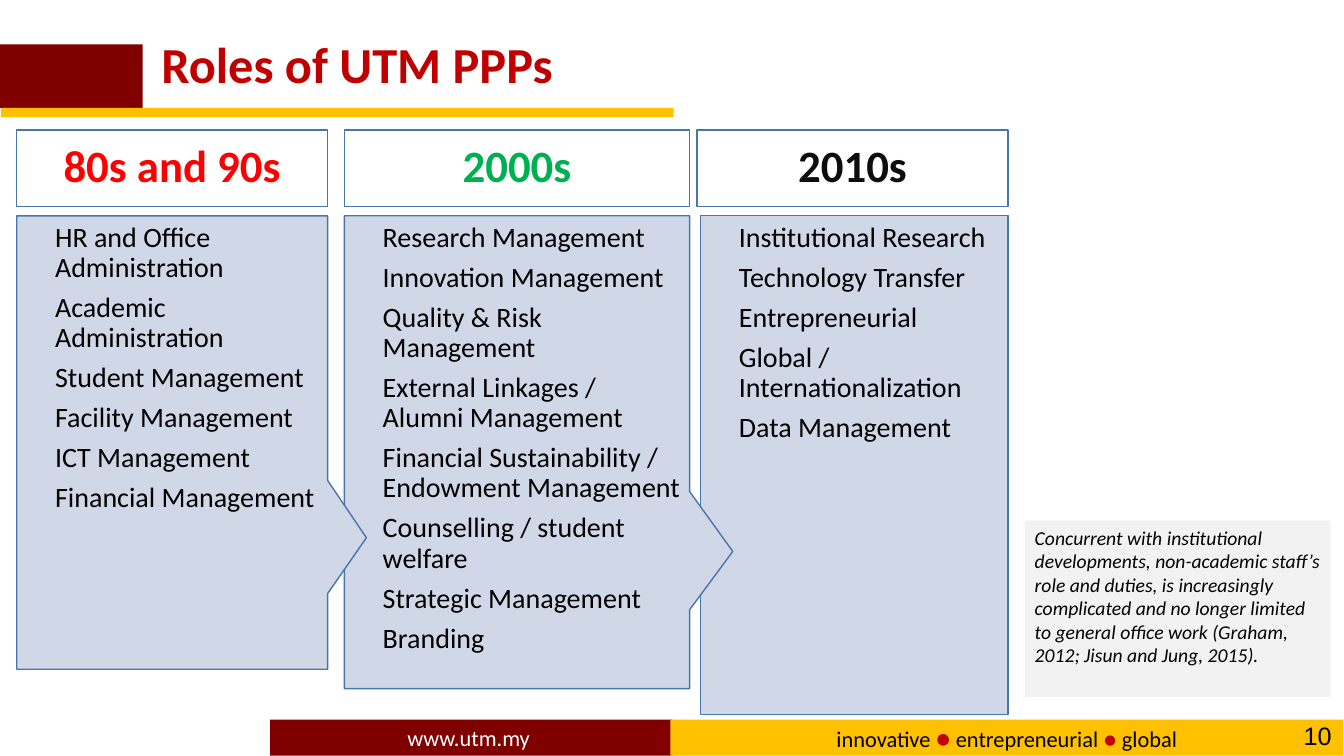
from dataclasses import dataclass

from pptx import Presentation
from pptx.dml.color import RGBColor as Color
from pptx.enum.shapes import MSO_SHAPE as Shape
from pptx.enum.text import MSO_ANCHOR as Anchor, MSO_AUTO_SIZE as AutoSize, PP_ALIGN as Align
from pptx.util import Inches, Pt

UNIT = Inches(13.33) / 160  # the slide is a grid of 160 columns by 90 rows


@dataclass(frozen=True)
class Theme:
    maroon: str = "800000"
    gold: str = "FFC000"
    red: str = "C00000"
    black: str = "000000"
    white: str = "FFFFFF"
    panel: str = "D0D8E8"
    outline: str = "4875AC"
    note: str = "F2F2F2"
    font: str = "Calibri"
    number_font: str = "Arial"
    title: int = 36
    heading: int = 32
    body: int = 20
    dot: int = 18
    footer: int = 16
    small: int = 14


THEME = Theme()


@dataclass(frozen=True)
class Box:
    """A place on the grid, in columns and rows."""
    col: float
    row: float
    cols: float
    rows: float

    def inner(self, col, row, cols, rows):
        return Box(self.col + col, self.row + row, cols, rows)

    def lengths(self):
        return [int(n * UNIT) for n in (self.col, self.row, self.cols, self.rows)]


@dataclass(frozen=True)
class Decade:
    name: str
    color: str
    roles: tuple
    box: Box
    indent: float = 0
    pointed: bool = True


DECADES = (
    Decade("80s and 90s", "FF0000",
           ("HR and Office Administration", "Academic Administration", "Student Management",
            "Facility Management", "ICT Management", "Financial Management"),
           Box(2, 15.5, 37, 64.2)),
    Decade("2000s", "00B050",
           ("Research Management", "Innovation Management", "Quality & Risk Management",
            "External Linkages / Alumni Management",
            "Financial Sustainability / Endowment Management",
            "Counselling / student welfare", "Strategic Management", "Branding"),
           Box(41, 15.5, 41.1, 66.5)),
    Decade("2010s", "0D0D0D",
           ("Institutional Research", "Technology Transfer", "Entrepreneurial",
            "Global / Internationalization", "Data Management"),
           Box(83, 15.5, 37, 69.6), indent=0.4, pointed=False),
)
NOTE = ("Concurrent with institutional developments, non-academic staff’s role and duties, "
        "is increasingly complicated and no longer limited to general office work "
        "(Graham, 2012; Jisun and Jung, 2015).")


def add_block(slide, box, fill, line=None, kind=Shape.RECTANGLE):
    shape = slide.shapes.add_shape(kind, *box.lengths())
    shape.shadow.inherit = False
    shape.fill.solid()
    shape.fill.fore_color.rgb = Color.from_string(fill)
    if line:
        shape.line.color.rgb = Color.from_string(line)
        shape.line.width = Pt(1)
    else:
        shape.line.fill.background()
    return shape


def set_frame(shape, anchor, margins=(0.1, 0.05, 0.1, 0.05)):
    frame = shape.text_frame
    frame.word_wrap = True
    frame.auto_size = AutoSize.NONE
    frame.vertical_anchor = anchor
    (frame.margin_left, frame.margin_top,
     frame.margin_right, frame.margin_bottom) = map(Inches, margins)
    return frame


def add_span(para, text, size, color, bold=False, italic=False, font=THEME.font):
    span = para.add_run()
    span.text = text
    span.font.name = font
    span.font.size = Pt(size)
    span.font.bold = bold
    span.font.italic = italic
    span.font.color.rgb = Color.from_string(color)


def set_spacing(para, size):
    para.line_spacing = 0.9
    para.space_after = Pt(size * 0.35)


def title_band(slide, box):
    # Maroon block and gold rule
    add_block(slide, box.inner(0, 2.3, 17, 7.55), THEME.maroon)
    add_block(slide, box.inner(0.1, 9.85, 80.1, 1.1), THEME.gold)
    # Title
    title = slide.shapes.title
    title.left, title.top, title.width, title.height = box.inner(18, 0, 119.3, 9.1).lengths()
    para = set_frame(title, Anchor.MIDDLE).paragraphs[0]
    para.alignment = Align.LEFT
    add_span(para, "Roles of UTM PPPs", THEME.title, THEME.red, bold=True)


def decade_column(slide, decade):
    box = decade.box
    # Heading
    heading = add_block(slide, box.inner(0, 0, box.cols, 9.1), THEME.white, THEME.outline)
    para = set_frame(heading, Anchor.MIDDLE, (0.11,) * 4).paragraphs[0]
    para.alignment = Align.CENTER
    set_spacing(para, THEME.heading)
    add_span(para, decade.name, THEME.heading, decade.color, bold=True)
    # Panel of roles, pointing to the next decade
    place = box.inner(decade.indent, 10.2, box.cols - decade.indent, box.rows - 10.2)
    kind = Shape.RECTANGULAR_CALLOUT if decade.pointed else Shape.RECTANGLE
    panel = add_block(slide, place, THEME.panel, THEME.outline, kind)
    if decade.pointed:
        panel.adjustments[0], panel.adjustments[1] = 0.625, 0.21
    frame = set_frame(panel, Anchor.TOP, (0.38, 0.07, 0.07, 0.07))
    for index, role in enumerate(decade.roles):
        para = frame.add_paragraph() if index else frame.paragraphs[0]
        para.alignment = Align.LEFT
        set_spacing(para, THEME.body)
        add_span(para, role, THEME.body, THEME.black)


def side_note(slide, box):
    para = set_frame(add_block(slide, box, THEME.note), Anchor.TOP).paragraphs[0]
    para.alignment = Align.LEFT
    add_span(para, NOTE, THEME.small, THEME.black, italic=True)


def footer_band(slide, box):
    # Web address
    address = add_block(slide, box.inner(32.15, 0, 47.9, box.rows), THEME.maroon)
    para = set_frame(address, Anchor.MIDDLE).paragraphs[0]
    para.alignment = Align.CENTER
    add_span(para, "www.utm.my ", THEME.footer, THEME.white)
    # Motto
    motto = add_block(slide, box.inner(79.8, 0, 80.1, box.rows), THEME.gold)
    para = set_frame(motto, Anchor.MIDDLE).paragraphs[0]
    para.alignment = Align.CENTER
    for text, size, color in (("innovative ", THEME.footer, THEME.black),
                              ("●", THEME.dot, THEME.red),
                              (" entrepreneurial ", THEME.footer, THEME.black),
                              ("● ", THEME.footer, THEME.red),
                              ("global", THEME.footer, THEME.black)):
        add_span(para, text, size, color)
    # Page number
    number = slide.shapes.add_textbox(*box.inner(149.3, -0.5, 10.4, 4.8).lengths())
    para = set_frame(number, Anchor.MIDDLE).paragraphs[0]
    para.alignment = Align.RIGHT
    add_span(para, "10", THEME.dot, THEME.black, font=THEME.number_font)


def main():
    deck = Presentation()
    deck.slide_width, deck.slide_height = Inches(13.33), Inches(7.5)
    page = deck.slides.add_slide(deck.slide_layouts[5])
    title_band(page, Box(0, 3, 160, 11))
    footer_band(page, Box(0, 85.7, 160, 4.3))
    side_note(page, Box(122, 62, 36.4, 21))
    # Later decades lie behind, so that each pointer shows
    for decade in reversed(DECADES):
        decade_column(page, decade)
    deck.save("out.pptx")


if __name__ == "__main__":
    main()
